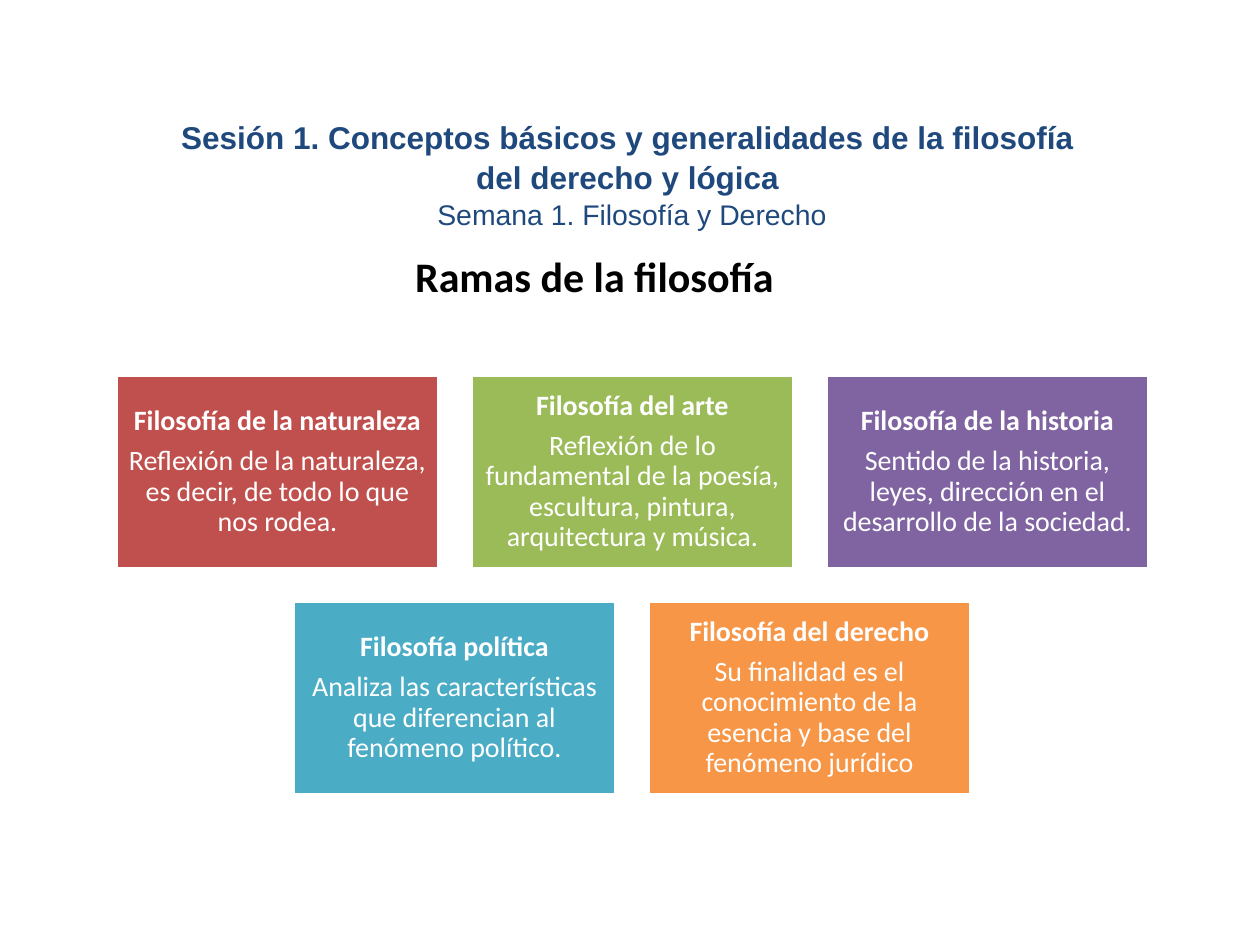
from pptx import Presentation
from pptx import util as u
from pptx.dml.color import RGBColor
from pptx.enum import shapes, text

COLORS = {
    "navy": "1F497D",
    "black": "000000",
    "white": "FFFFFF",
    "red": "C0504D",
    "green": "9BBB59",
    "purple": "8064A2",
    "teal": "4BACC6",
    "orange": "F79646",
}

CARD_WIDTH, CARD_HEIGHT, CARD_GAP = 323, 194, 32
CARDS_LEFT, CARDS_TOP, CARDS_PER_ROW = 116, 375, 3

BRANCHES = [
    ("red", "Filosofía de la naturaleza",
     "Reflexión de la naturaleza, es decir, de todo lo que nos rodea."),
    ("green", "Filosofía del arte",
     "Reflexión de lo fundamental de la poesía, escultura, pintura, arquitectura y música."),
    ("purple", "Filosofía de la historia",
     "Sentido de la historia, leyes, dirección en el desarrollo de la sociedad."),
    ("teal", "Filosofía política",
     "Analiza las características que diferencian al fenómeno político."),
    ("orange", "Filosofía del derecho",
     "Su finalidad es el conocimiento de la esencia y base del fenómeno jurídico"),
]


def px(value):
    return u.Emu(round(value * 914400 / 126))


def color(name):
    return RGBColor.from_string(COLORS[name])


def write_lines(frame, lines, font, ink):
    for index, (words, size, bold) in enumerate(lines):
        para = frame.paragraphs[0] if index == 0 else frame.add_paragraph()
        para.alignment = text.PP_ALIGN.CENTER
        span = para.add_run()
        span.text = words
        span.font.name = font
        span.font.size = u.Pt(size)
        span.font.bold = bold
        span.font.color.rgb = color(ink)


def add_text(page, left, top, width, height, lines, font, ink, anchor):
    box = page.shapes.add_textbox(px(left), px(top), px(width), px(height))
    frame = box.text_frame
    frame.word_wrap = True
    frame.vertical_anchor = anchor
    write_lines(frame, lines, font, ink)
    return frame


def add_card(page, left, top, fill, heading, description):
    card = page.shapes.add_shape(shapes.MSO_SHAPE.RECTANGLE, px(left), px(top),
                                 px(CARD_WIDTH), px(CARD_HEIGHT))
    card.shadow.inherit = False
    card.fill.solid()
    card.fill.fore_color.rgb = color(fill)
    card.line.color.rgb = color("white")
    card.line.width = u.Pt(2)
    frame = card.text_frame
    frame.word_wrap = True
    frame.vertical_anchor = text.MSO_ANCHOR.MIDDLE
    frame.margin_left = frame.margin_right = px(9)
    frame.margin_top = frame.margin_bottom = px(9)
    write_lines(frame, [(heading, 16, True), (description, 16, False)], "Calibri", "white")
    for para in frame.paragraphs:
        para.line_spacing = 0.9
    frame.paragraphs[0].space_after = u.Pt(5.6)


def add_cards(page):
    pitch_x, pitch_y = CARD_WIDTH + CARD_GAP, CARD_HEIGHT + CARD_GAP
    for index, branch in enumerate(BRANCHES):
        row, column = divmod(index, CARDS_PER_ROW)
        in_row = min(CARDS_PER_ROW, len(BRANCHES) - row * CARDS_PER_ROW)
        indent = (CARDS_PER_ROW - in_row) * pitch_x // 2
        add_card(page, CARDS_LEFT + indent + column * pitch_x,
                 CARDS_TOP + row * pitch_y, *branch)


def main():
    deck = Presentation()
    deck.slide_width, deck.slide_height = px(1260), px(945)
    page = deck.slides.add_slide(deck.slide_layouts[6])
    title = add_text(page, 65, 96, 1134, 158, [
        ("Sesión 1. Conceptos básicos y generalidades de la filosofía ", 18, True),
        ("del derecho y lógica ", 18, True),
        ("Semana 1. Filosofía y Derecho", 16.2, False),
    ], "Arial", "navy", text.MSO_ANCHOR.MIDDLE)
    for para in title.paragraphs[1:]:
        para.space_before = u.Pt(1)
    add_text(page, 63, 244, 1063, 665, [("Ramas de la filosofía", 24, True)],
             "Calibri", "black", text.MSO_ANCHOR.TOP)
    add_cards(page)
    deck.save("out.pptx")


if __name__ == "__main__":
    main()
